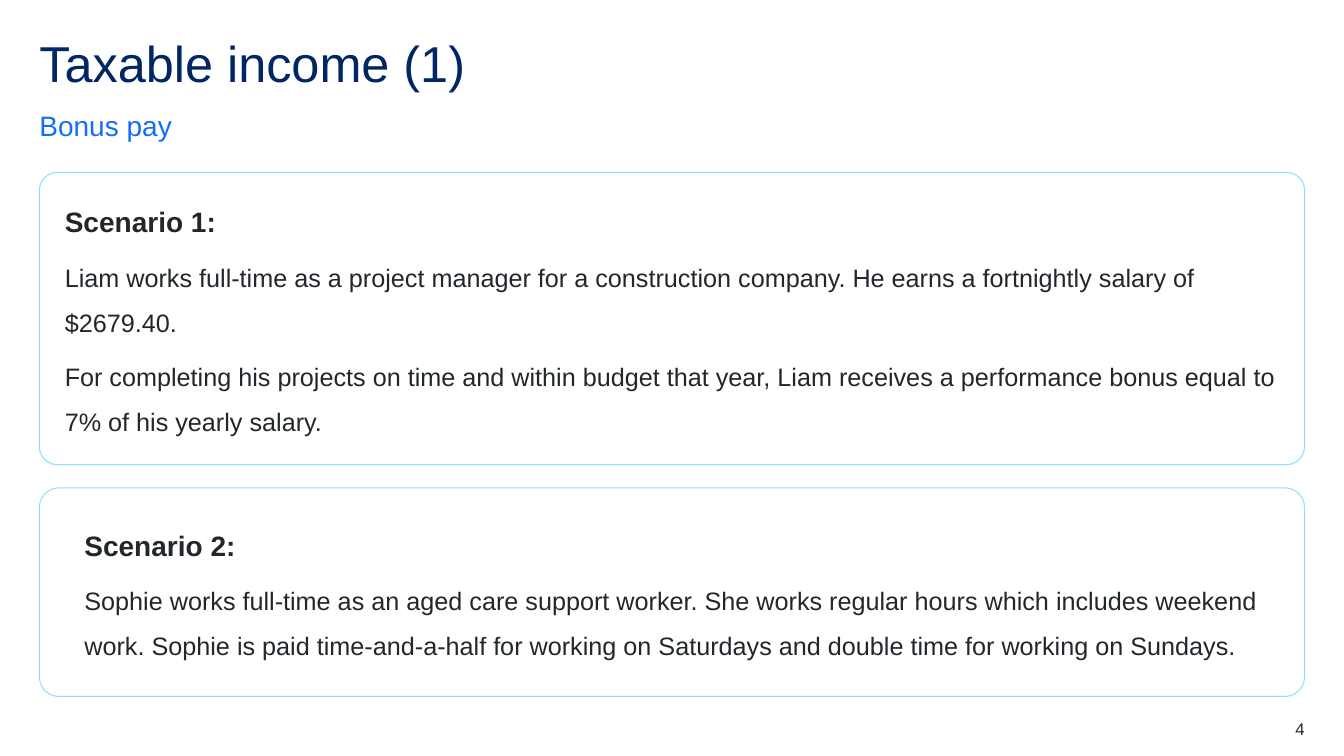
from dataclasses import dataclass

from pptx import Presentation
from pptx.dml.color import RGBColor
from pptx.enum.shapes import MSO_SHAPE
from pptx.enum.text import MSO_ANCHOR, MSO_AUTO_SIZE, PP_ALIGN
from pptx.shapes.autoshape import Shape
from pptx.slide import Slide
from pptx.text.text import TextFrame
from pptx.util import Inches, Pt

ROUNDED = MSO_SHAPE.ROUNDED_RECTANGLE
TOP, MIDDLE, BOTTOM = MSO_ANCHOR.TOP, MSO_ANCHOR.MIDDLE, MSO_ANCHOR.BOTTOM
LEFT, RIGHT = PP_ALIGN.LEFT, PP_ALIGN.RIGHT
NO_AUTOFIT = MSO_AUTO_SIZE.NONE

SLIDE_W, SLIDE_H = Inches(13.33), Inches(7.5)
MARGIN = 2.93  # percent of slide width
CONTENT_W = 100 - 2 * MARGIN
NUMBER_W = 5.93


@dataclass(frozen=True)
class Theme:
    font: str = "Arial"
    navy: str = "002664"
    blue: str = "146CFD"
    ink: str = "22272B"
    outline: str = "8CE0FF"
    title: int = 36
    heading: int = 20
    body: int = 18
    number: int = 12


THEME = Theme()


@dataclass(frozen=True)
class Area:
    """Box in percent of the slide's width and height."""
    top: float
    height: float
    left: float = MARGIN
    width: float = CONTENT_W

    def box(self) -> tuple[int, int, int, int]:
        return (int(SLIDE_W * self.left / 100), int(SLIDE_H * self.top / 100),
                int(SLIDE_W * self.width / 100), int(SLIDE_H * self.height / 100))


@dataclass(frozen=True)
class TextStyle:
    size: int
    color: str
    bold: bool = False
    align: PP_ALIGN = LEFT
    spacing: float = 1.0
    after: int = 0


@dataclass(frozen=True)
class Scenario:
    area: Area
    corner: float
    indent: float
    heading: str
    body: tuple[str, ...]


TITLE = TextStyle(THEME.title, THEME.navy, spacing=0.9)
SUBTITLE = TextStyle(THEME.heading, THEME.blue, spacing=1.5, after=12)
HEADING = TextStyle(THEME.heading, THEME.ink, bold=True, spacing=1.5, after=6)
BODY = TextStyle(THEME.body, THEME.ink, spacing=1.5, after=6)
NUMBER = TextStyle(THEME.number, THEME.ink, align=RIGHT)

SCENARIOS = (
    Scenario(Area(22.8, 38.67), 0.062, 0, "Scenario 1:", (
        "Liam works full-time as a project manager for a construction company. "
        "He earns a fortnightly salary of $2679.40.",
        "For completing his projects on time and within budget that year, "
        "Liam receives a performance bonus equal to 7% of his yearly salary.",
    )),
    Scenario(Area(64.53, 27.6), 0.094, 0.19, "Scenario 2:", (
        "Sophie works full-time as an aged care support worker. She works regular "
        "hours which includes weekend work. Sophie is paid time-and-a-half for "
        "working on Saturdays and double time for working on Sundays.",
    )),
)


def apply(target: object, values: dict) -> None:
    for name, value in values.items():
        setattr(target, name, value)


def write(tf: TextFrame, lines: list[tuple[str, TextStyle]], anchor: MSO_ANCHOR = TOP,
          insets: tuple[float, float, float, float] = (0, 0, 0, 0)) -> None:
    """Fill a frame with one styled paragraph per line; insets are in inches."""
    left, top, right, bottom = map(Inches, insets)
    apply(tf, dict(word_wrap=True, auto_size=NO_AUTOFIT, vertical_anchor=anchor,
                   margin_left=left, margin_top=top,
                   margin_right=right, margin_bottom=bottom))
    for i, (text, style) in enumerate(lines):
        p = tf.add_paragraph() if i else tf.paragraphs[0]
        apply(p, dict(alignment=style.align, line_spacing=style.spacing,
                      space_before=Pt(0), space_after=Pt(style.after)))
        r = p.add_run()
        r.text = text
        apply(r.font, dict(name=THEME.font, size=Pt(style.size), bold=style.bold))
        r.font.color.rgb = RGBColor.from_string(style.color)


def add_title(s: Slide, text: str, area: Area) -> None:
    sp = s.shapes.title
    apply(sp, dict(zip(("left", "top", "width", "height"), area.box())))
    write(sp.text_frame, [(text, TITLE)])


def add_label(s: Slide, text: str, area: Area, style: TextStyle,
              anchor: MSO_ANCHOR = TOP) -> None:
    write(s.shapes.add_textbox(*area.box()).text_frame, [(text, style)], anchor)


def add_scenario(s: Slide, scenario: Scenario) -> Shape:
    sp = s.shapes.add_shape(ROUNDED, *scenario.area.box())
    sp.adjustments[0] = scenario.corner
    sp.shadow.inherit = False
    sp.fill.background()
    sp.line.color.rgb = RGBColor.from_string(THEME.outline)
    sp.line.width = Pt(0.75)
    lines = [(scenario.heading, HEADING)] + [(text, BODY) for text in scenario.body]
    write(sp.text_frame, lines, MIDDLE, (0.2 + scenario.indent, 0.08, 0.2, 0.2))
    return sp


def main() -> None:
    prs = Presentation()
    apply(prs, dict(slide_width=SLIDE_W, slide_height=SLIDE_H))
    s = prs.slides.add_slide(prs.slide_layouts.get_by_name("Title Only"))
    add_title(s, "Taxable income (1)", Area(5.2, 8))
    add_label(s, "Bonus pay", Area(14.27, 4.53), SUBTITLE, BOTTOM)
    for scenario in SCENARIOS:
        add_scenario(s, scenario)
    number_left = 100 - MARGIN - NUMBER_W
    add_label(s, "4", Area(95.07, 2.67, number_left, NUMBER_W), NUMBER)
    prs.save("out.pptx")


if __name__ == "__main__":
    main()
